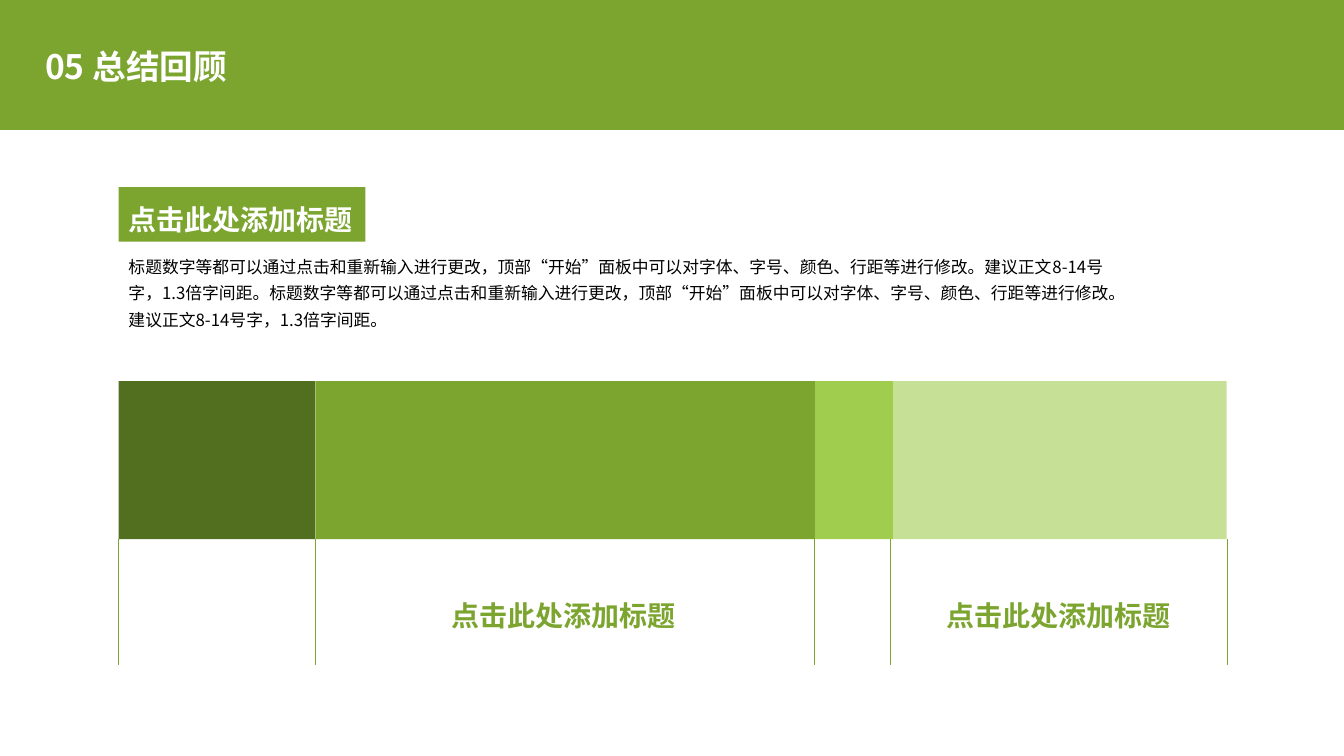
from lxml import etree
from pptx import Presentation
from pptx.dml.color import RGBColor
from pptx.enum.shapes import MSO_CONNECTOR, MSO_SHAPE
from pptx.enum.text import MSO_ANCHOR, MSO_AUTO_SIZE
from pptx.oxml.ns import qn
from pptx.util import Pt

RECT = MSO_SHAPE.RECTANGLE
STRAIGHT = MSO_CONNECTOR.STRAIGHT
TOP, MIDDLE = MSO_ANCHOR.TOP, MSO_ANCHOR.MIDDLE
FIT_SHAPE, NO_FIT = MSO_AUTO_SIZE.SHAPE_TO_FIT_TEXT, MSO_AUTO_SIZE.NONE

WHITE = RGBColor(0xFF, 0xFF, 0xFF)
BLACK = RGBColor(0x00, 0x00, 0x00)
GREEN = RGBColor(0x7B, 0xA5, 0x2F)
DARK_GREEN = RGBColor(0x52, 0x6E, 0x1F)
LIGHT_GREEN = RGBColor(0xA0, 0xCD, 0x4E)
PALE_GREEN = RGBColor(0xC6, 0xE1, 0x95)
FONT = "Noto Sans CJK SC"
HEADING = "点击此处添加标题"
BODY = ("标题数字等都可以通过点击和重新输入进行更改，顶部“开始”面板中可以对字体、字号、"
        "颜色、行距等进行修改。建议正文8-14号字，1.3倍字间距。")

prs = Presentation()
prs.slide_width, prs.slide_height = Pt(960), Pt(540)
s = prs.slides.add_slide(prs.slide_layouts[6])
s.background.fill.solid()
s.background.fill.fore_color.rgb = GREEN


def add_rect(left, top, width, height, color):
    sp = s.shapes.add_shape(RECT, Pt(left), Pt(top), Pt(width), Pt(height))
    sp.shadow.inherit = False
    sp.fill.solid()
    sp.fill.fore_color.rgb = color
    sp.line.fill.background()
    return sp


def add_text(text, left, top, width, height, size=20, color=GREEN, bold=True,
             wrap=False, fit=FIT_SHAPE, anchor=TOP, spacing=1.3, fill=None):
    """Add a text box, with a background colour if fill is given."""
    sp = s.shapes.add_textbox(Pt(left), Pt(top), Pt(width), Pt(height))
    if fill is not None:
        sp.fill.solid()
        sp.fill.fore_color.rgb = fill
    tf = sp.text_frame
    tf.word_wrap = wrap
    tf.auto_size = fit
    tf.vertical_anchor = anchor
    p = tf.paragraphs[0]
    p.line_spacing = spacing
    r = p.add_run()
    r.text = text
    r.font.name = FONT
    r.font.size = Pt(size)
    r.font.bold = bold
    r.font.color.rgb = color
    etree.SubElement(r.font._element, qn("a:ea"), typeface=FONT)


# Header and introduction
add_rect(0, 93, 960, 447, WHITE)
add_text("05 总结回顾", 25.2, 20.2, 417.6, 56.9, size=24, color=WHITE,
         wrap=True, fit=NO_FIT, anchor=MIDDLE, spacing=0.9)
add_text(BODY * 2, 84.7, 175.7, 718.6, 64, size=12, color=BLACK, bold=False,
         wrap=True)
add_text(HEADING, 84.7, 133.7, 176.4, 38.9, color=WHITE, fill=GREEN)

# Proportional bar
BAR_TOP, BAR_HEIGHT = 272.2, 113
BAR_BOTTOM = BAR_TOP + BAR_HEIGHT
edges = [84.7, 225.4, 582.2, 637.9, 876.2]
colors = [DARK_GREEN, GREEN, LIGHT_GREEN, PALE_GREEN]
for left, right, color in zip(edges, edges[1:], colors):
    add_rect(left, BAR_TOP, right - left, BAR_HEIGHT, color)

# Dividers below the bar
for x in [84.7, 225.4, 581.8, 636.3, 876.6]:
    line = s.shapes.add_connector(STRAIGHT, Pt(x), Pt(BAR_BOTTOM),
                                  Pt(x), Pt(BAR_BOTTOM + 90))
    line.line.color.rgb = GREEN
    line.line.width = Pt(0.5)
    etree.SubElement(line._element.spPr, qn("a:effectLst"))

# Captions of the two wide segments
for left in [315.4, 668.9]:
    add_text(HEADING, left, 416.9, 176.4, 38.9)

prs.save("out.pptx")
